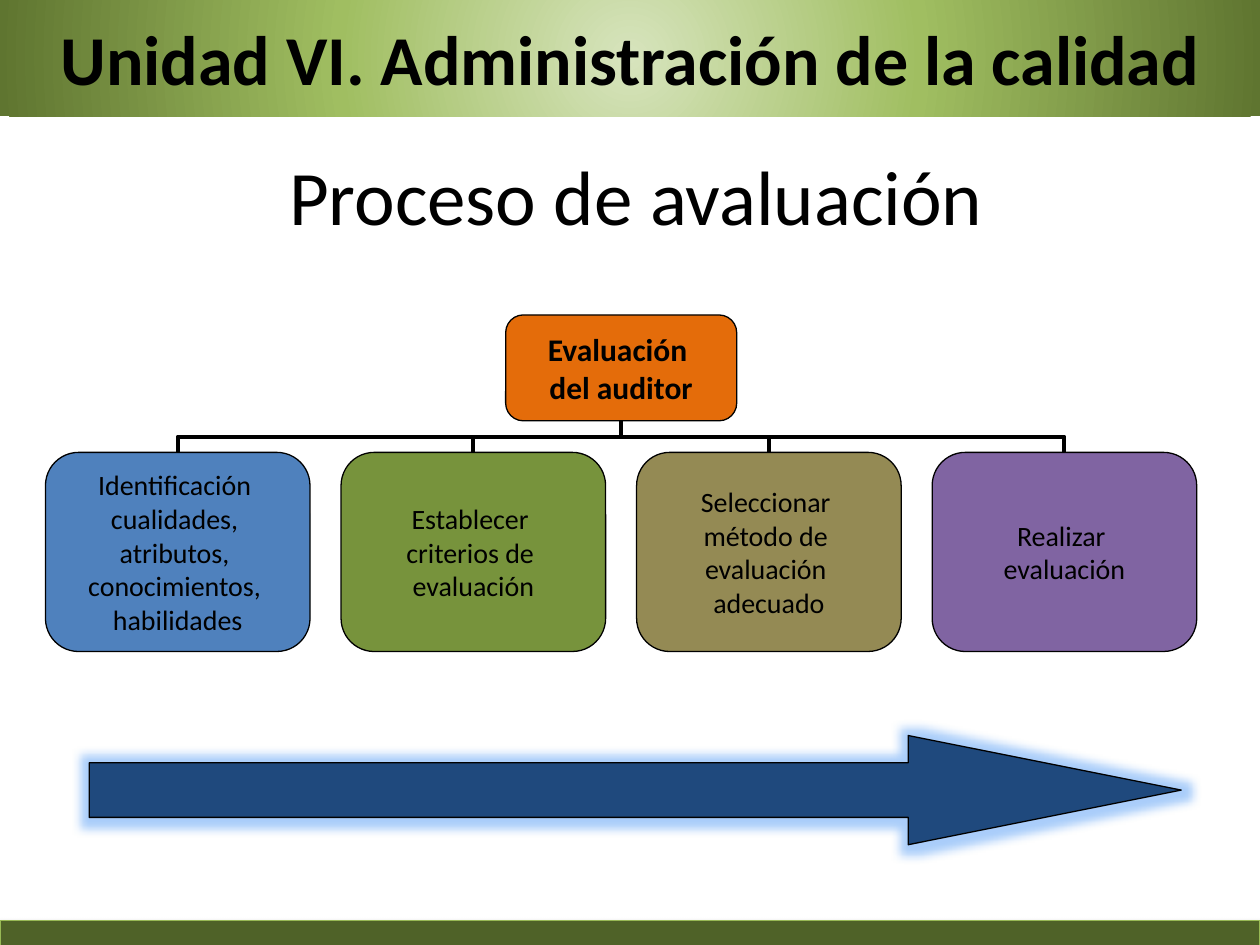
from dataclasses import dataclass
from lxml.etree import SubElement
from pptx import Presentation
from pptx.dml.color import RGBColor
from pptx.enum.shapes import MSO_CONNECTOR, MSO_SHAPE
from pptx.enum.text import MSO_ANCHOR, PP_ALIGN
from pptx.oxml.ns import qn
from pptx.util import Pt


@dataclass(frozen=True)
class Theme:
    """Colours, font and type sizes of the slide."""
    font: str = "Calibri"
    ink: str = "000000"
    root: str = "E46C0A"
    arrow: str = "1F497D"
    glow: str = "2B84F3"
    foot: str = "4F6228"
    edge: str = "98B955"
    band: tuple = ((0, "D7E4BD"), (46, "A0BE61"), (100, "5F7530"))
    title: int = 44
    head: int = 40
    lead: int = 18
    body: int = 16


THEME = Theme()
STEPS = (
    ("Identificación \ncualidades, \natributos, \nconocimientos, \nhabilidades", "4F81BD"),
    ("Establecer \ncriterios de \nevaluación", "77933C"),
    ("Seleccionar \nmétodo de \nevaluación \nadecuado", "948A54"),
    ("Realizar \nevaluación", "8064A2"),
)


def rgb(code):
    """Turn a hex code into a colour."""
    return RGBColor.from_string(code)


def write(frame, text, size, bold=False, wrap=True):
    """Set centred text in a frame and format its runs."""
    frame.text = text
    frame.word_wrap = wrap
    frame.vertical_anchor = MSO_ANCHOR.MIDDLE
    for para in frame.paragraphs:
        para.alignment = PP_ALIGN.CENTER
        for run in para.runs:
            run.font.name = THEME.font
            run.font.size = Pt(size)
            run.font.bold = bold
            run.font.color.rgb = rgb(THEME.ink)


def draw(slide, kind, box, fill, line=None):
    """Add a flat shape, with a thin outline if a line colour is given."""
    shape = slide.shapes.add_shape(kind, *map(Pt, box))
    shape.shadow.inherit = False
    shape.fill.solid()
    shape.fill.fore_color.rgb = rgb(fill)
    if line:
        shape.line.color.rgb = rgb(line)
        shape.line.width = Pt(0.75)
    else:
        shape.line.fill.background()
    return shape


def tint(node, code, alpha=100):
    """Add a colour with its opacity in percent to an XML node."""
    color = SubElement(node, qn("a:srgbClr"), val=code)
    if alpha < 100:
        SubElement(color, qn("a:alpha"), val=str(alpha * 1000))


def effect(shape, name, code, alpha, **values):
    """Add a glow or shadow to a shape."""
    group = shape.element.spPr.find(qn("a:effectLst"))
    attrs = {key: str(value) for key, value in values.items()}
    tint(SubElement(group, qn(name), attrs), code, alpha)


def title(slide, box):
    """Place the slide title."""
    shape = slide.shapes.title
    shape.left, shape.top, shape.width, shape.height = map(Pt, box)
    write(shape.text_frame, "Proceso de avaluación", THEME.title)


def link(slide, low, high):
    """Join a card top to the root foot with an upright elbow."""
    side = 1 if low[0] > high[0] else -1
    run, rise = abs(low[0] - high[0]), low[1] - high[1]
    mid, level = (low[0] + high[0]) / 2, (low[1] + high[1]) / 2
    ends = (mid + side * rise / 2, level - run / 2,
            mid - side * rise / 2, level + run / 2)
    elbow = slide.shapes.add_connector(MSO_CONNECTOR.ELBOW, *map(Pt, ends))
    elbow.line.color.rgb = rgb(THEME.ink)
    elbow.line.width = Pt(2.25)
    frame = elbow.element.spPr
    frame.find(qn("a:xfrm")).set("rot", str((180 - side * 90) * 60000))
    SubElement(frame, qn("a:effectLst"))


def chart(slide, box):
    """Place the root and the row of cards below it."""
    left, top, width, height = box
    root, card, gap = (132, 60.5), (151.2, 113.8), 17.7
    mid, row = left + width / 2, top + height - card[1]
    spots = [left + i * (card[0] + gap) for i in range(len(STEPS))]
    for spot in reversed(spots):
        link(slide, (spot + card[0] / 2, row), (mid, top + root[1]))
    shape = draw(slide, MSO_SHAPE.ROUNDED_RECTANGLE,
                 (mid - root[0] / 2, top, *root), THEME.root, THEME.ink)
    write(shape.text_frame, "Evaluación \ndel auditor", THEME.lead, True, False)
    for spot, (text, fill) in zip(spots, STEPS):
        shape = draw(slide, MSO_SHAPE.ROUNDED_RECTANGLE,
                     (spot, row, *card), fill, THEME.ink)
        write(shape.text_frame, text, THEME.body, wrap=False)


def arrow(slide, box):
    """Place the glowing arrow."""
    shape = draw(slide, MSO_SHAPE.RIGHT_ARROW, box, THEME.arrow, THEME.ink)
    shape.adjustments[1] = 2.5
    effect(shape, "a:glow", THEME.glow, 40, rad=Pt(11))


def header(slide, box):
    """Place the band with the unit name."""
    shape = draw(slide, MSO_SHAPE.RECTANGLE, box, THEME.band[0][1])
    shape.fill.gradient()
    grad = shape.element.spPr.find(qn("a:gradFill"))
    grad.clear()
    stops = SubElement(grad, qn("a:gsLst"))
    for place, code in THEME.band:
        tint(SubElement(stops, qn("a:gs"), pos=str(place * 1000)), code)
    focus = SubElement(grad, qn("a:path"), path="circle")
    SubElement(focus, qn("a:fillToRect"), dict.fromkeys("ltrb", "50000"))
    write(shape.text_frame, "Unidad VI. Administración de la calidad",
          THEME.head, True)


def footer(slide, box):
    """Place the bottom bar."""
    shape = draw(slide, MSO_SHAPE.RECTANGLE, box, THEME.foot, THEME.edge)
    effect(shape, "a:outerShdw", THEME.ink, 35, blurRad=Pt(3.1),
           dist=Pt(1.8), dir=90 * 60000, rotWithShape=0)


def main():
    """Build and save the slide."""
    deck = Presentation()
    deck.slide_width, deck.slide_height = Pt(720), Pt(540)
    slide = deck.slides.add_slide(deck.slide_layouts[5])
    title(slide, (39.6, 66, 648, 90))
    chart(slide, (26, 180, 657.9, 192.3))
    arrow(slide, (51, 420.3, 624, 62.4))
    header(slide, (0, -0.6, 720, 67))
    footer(slide, (0, 526, 720, 16))
    deck.save("out.pptx")


if __name__ == "__main__":
    main()
